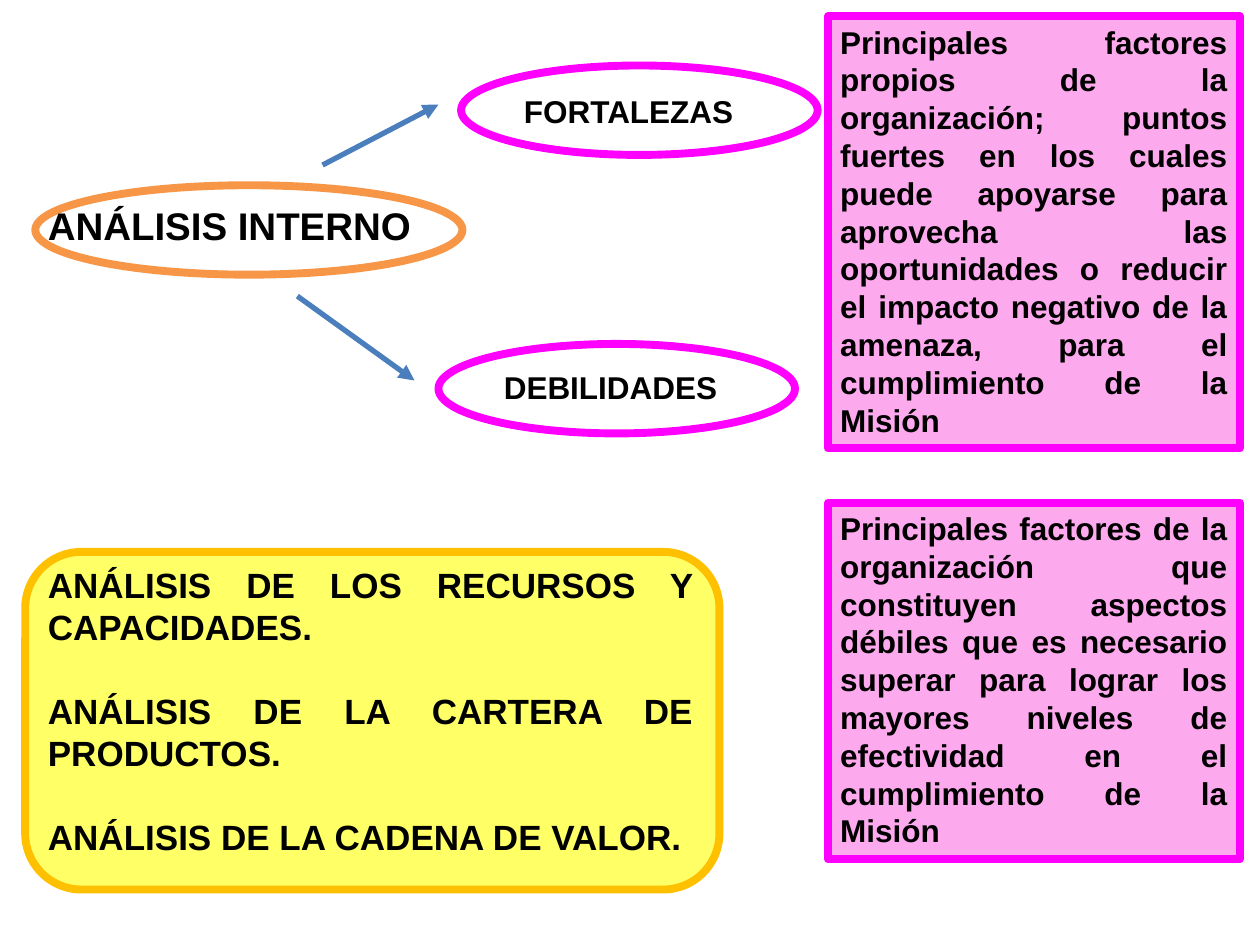
from lxml.etree import SubElement
from pptx import Presentation
from pptx.dml.color import RGBColor
from pptx.enum.shapes import MSO_CONNECTOR, MSO_SHAPE
from pptx.enum.text import MSO_ANCHOR, MSO_AUTO_SIZE, PP_ALIGN
from pptx.oxml.ns import qn
from pptx.util import Inches, Pt

BLACK = RGBColor(0x00, 0x00, 0x00)
WHITE = RGBColor(0xFF, 0xFF, 0xFF)
MAGENTA = RGBColor(0xFF, 0x00, 0xFF)
PINK = RGBColor(0xFD, 0xA9, 0xED)
ORANGE = RGBColor(0xF7, 0x96, 0x46)
GOLD = RGBColor(0xFF, 0xC0, 0x00)
YELLOW = RGBColor(0xFF, 0xFF, 0x66)
BLUE = RGBColor(0x4B, 0x7E, 0xBC)

ANALYSES = [
    "ANÁLISIS DE LOS RECURSOS Y CAPACIDADES.",
    "ANÁLISIS DE LA CARTERA DE PRODUCTOS.",
    "ANÁLISIS DE LA CADENA DE VALOR.",
]
STRENGTHS = (
    "Principales factores propios de la organización; puntos fuertes en los cuales "
    "puede apoyarse para aprovecha las oportunidades o reducir el impacto negativo "
    "de la amenaza, para el cumplimiento de la Misión"
)
WEAKNESSES = (
    "Principales factores de la organización que constituyen aspectos débiles que es "
    "necesario superar para lograr los mayores niveles de efectividad en el "
    "cumplimiento de la Misión"
)


def write(tf, *texts, size=18, align=PP_ALIGN.LEFT, wrap=True, gap=0):
    """Fill a text frame with bold, unbulleted paragraphs set gap points apart."""
    tf.word_wrap = wrap
    tf.auto_size = MSO_AUTO_SIZE.SHAPE_TO_FIT_TEXT
    tf.vertical_anchor = MSO_ANCHOR.TOP
    for i, text in enumerate(texts):
        p = tf.paragraphs[0] if i == 0 else tf.add_paragraph()
        p.alignment = align
        p.space_before = Pt(gap if i else 0)
        pPr = p._p.get_or_add_pPr()
        pPr.set("marL", "0")
        pPr.set("indent", "0")
        SubElement(pPr, qn("a:buNone"))
        r = p.add_run()
        r.text = text
        r.font.name = "Arial"
        r.font.size = Pt(size)
        r.font.bold = True
        r.font.color.rgb = BLACK


class Diagram:
    """Hold the slide and the line widths shared by its elements."""

    outline = Pt(4.5)
    arrow_width = Pt(3)

    def __init__(self, s):
        self.s = s

    def shape(self, kind, x, y, w, h, fill, line):
        """Add an outlined preset shape."""
        sp = self.s.shapes.add_shape(kind, Inches(x), Inches(y), Inches(w), Inches(h))
        sp.shadow.inherit = False
        sp.fill.solid()
        sp.fill.fore_color.rgb = fill
        sp.line.color.rgb = line
        sp.line.width = self.outline
        return sp

    def placeholder(self, sp, x, y, w, h, *texts, **fmt):
        """Move a placeholder in front of the shapes and fill it."""
        sp.left, sp.top, sp.width, sp.height = map(Inches, (x, y, w, h))
        sp.element.getparent().append(sp.element)
        write(sp.text_frame, *texts, **fmt)

    def label(self, x, y, w, h, text):
        """Add a one-line label."""
        sp = self.s.shapes.add_textbox(Inches(x), Inches(y), Inches(w), Inches(h))
        write(sp.text_frame, text, wrap=False)

    def definition(self, y, h, text):
        """Add a pink box of justified text in the right column."""
        sp = self.shape(MSO_SHAPE.RECTANGLE, 6.57, y, 3.27, h, PINK, MAGENTA)
        write(sp.text_frame, text, align=PP_ALIGN.JUSTIFY)

    def arrow(self, x1, y1, x2, y2):
        """Add a straight arrow."""
        c = self.s.shapes.add_connector(
            MSO_CONNECTOR.STRAIGHT, Inches(x1), Inches(y1), Inches(x2), Inches(y2)
        )
        c.line.color.rgb = BLUE
        c.line.width = self.arrow_width
        SubElement(c.line._get_or_add_ln(), qn("a:tailEnd"), type="triangle")
        SubElement(c.element.spPr, qn("a:effectLst"))


def main():
    """Build the internal analysis slide."""
    prs = Presentation()
    prs.slide_width, prs.slide_height = Inches(10), Inches(7.5)
    s = prs.slides.add_slide(prs.slide_layouts[1])
    d = Diagram(s)

    d.shape(MSO_SHAPE.ROUNDED_RECTANGLE, 0.2, 4.38, 5.51, 2.68, YELLOW, GOLD)
    for x, y in ((3.48, 2.73), (3.66, 0.52)):
        d.shape(MSO_SHAPE.OVAL, x, y, 2.83, 0.71, WHITE, MAGENTA)
    d.shape(MSO_SHAPE.OVAL, 0.28, 1.47, 3.39, 0.71, WHITE, ORANGE)

    d.placeholder(s.shapes.title, 0.28, 1.55, 3.2, 0.47,
                  "ANÁLISIS INTERNO", size=22, wrap=False)
    d.label(4.06, 0.68, 1.88, 0.4, "FORTALEZAS")
    d.label(3.9, 2.87, 1.91, 0.4, "DEBILIDADES")
    d.placeholder(s.placeholders[1], 0.28, 4.42, 5.32, 2.79,
                  *ANALYSES, size=20, align=PP_ALIGN.JUSTIFY, gap=24)

    d.arrow(2.56, 1.31, 3.48, 0.83)
    d.arrow(2.36, 2.35, 3.29, 3.02)

    d.definition(0.13, 3.43, STRENGTHS)
    d.definition(3.99, 2.83, WEAKNESSES)
    prs.save("out.pptx")


if __name__ == "__main__":
    main()
